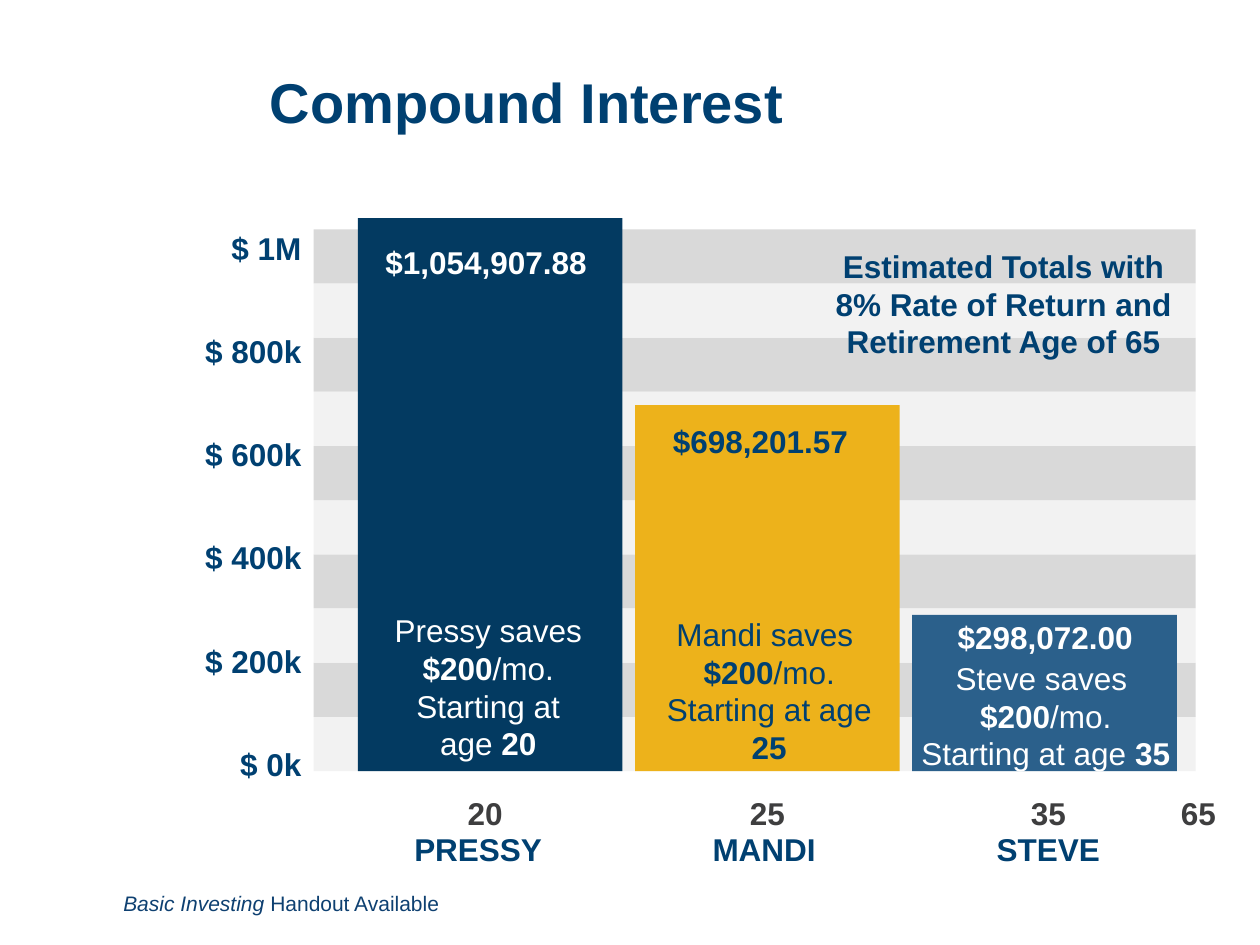
from dataclasses import dataclass

from pptx import Presentation, util as u
from pptx.dml.color import RGBColor
from pptx.enum import shapes, text

COLUMNS, ROWS = 100, 75
CELL = u.Inches(10) // COLUMNS

# Chart geometry in grid cells
PLOT_LEFT, PLOT_WIDTH = 24.9, 70
BASELINE, BAND_HEIGHT, BAND_COUNT = 61.2, 4.3, 10
BAR_LEFT, BAR_PITCH, BAR_WIDTH = 28.4, 22, 21
ROWS_PER_MILLION = 41.6


@dataclass(frozen=True)
class Theme:
    font: str = "Arial"
    title_size: int = 32
    body_size: int = 18
    note_size: int = 12
    navy: str = "004071"
    note: str = "0E4071"
    white: str = "FFFFFF"
    age: str = "3E3E3F"
    bands: tuple = ("F2F2F2", "D9D9D9")
    bars: tuple = ("033A61", "EDB21B", "2B608B")


THEME = Theme()
BOLD, ITALIC = {"bold": True}, {"italic": True}
LEFT, CENTER, RIGHT = (text.PP_ALIGN.LEFT, text.PP_ALIGN.CENTER,
                       text.PP_ALIGN.RIGHT)

# Boxes are (left, top, width, height) in cells; age and name are centres
SAVERS = [
    {"value": 1054907.88, "total": "$1,054,907.88", "ink": THEME.white,
     "total_box": (29.6, 18.8, 18.4, 4), "total_align": LEFT,
     "story_box": (29.7, 48, 18.1, 13.1),
     "story": [[("Pressy saves ", {}), ("$200", BOLD), ("/mo.", {})],
               [("Starting at age ", {}), ("20", BOLD)]],
     "age": ("20", 38.5), "name": ("PRESSY", 37.95)},
    {"value": 698201.57, "total": "$698,201.57", "ink": THEME.navy,
     "total_box": (51.1, 33, 18.5, 4), "total_align": CENTER,
     "story_box": (51.8, 48.3, 18.5, 13.1),
     "story": [[("Mandi saves ", {})],
               [("$200", BOLD), ("/mo.", {})],
               [("Starting at age ", {}), ("25", BOLD)]],
     "age": ("25", 60.9), "name": ("MANDI", 60.65)},
    {"value": 298072.00, "total": "$298,072.00", "ink": THEME.white,
     "total_box": (73.8, 48.6, 18.3, 4), "total_align": CENTER,
     "story_box": (71.8, 51.8, 22.4, 10.1),
     "story": [[("Steve saves \v", {}), ("$200", BOLD), ("/mo.", {})],
               [("Starting at age ", {}), ("35", BOLD)]],
     "age": ("35", 83.2), "name": ("STEVE", 83.2)},
]


def cells(*counts):
    return [round(count * CELL) for count in counts]


def style_font(font, color, **format_values):
    values = {"name": THEME.font, "size": u.Pt(THEME.body_size),
              **format_values}
    for attribute, value in values.items():
        setattr(font, attribute, value)
    font.color.rgb = RGBColor.from_string(color)


def add_block(slide, box, color):
    block = slide.shapes.add_shape(shapes.MSO_SHAPE.RECTANGLE, *cells(*box))
    block.shadow.inherit = False
    block.fill.solid()
    block.fill.fore_color.rgb = RGBColor.from_string(color)
    block.line.fill.background()


def add_text(slide, box, paragraphs, color, align=CENTER, wrap=True,
             size=THEME.body_size, gap=0):
    """Each paragraph is a list of (wording, format values) runs."""
    frame = slide.shapes.add_textbox(*cells(*box)).text_frame
    frame.word_wrap = wrap
    frame.auto_size = text.MSO_AUTO_SIZE.SHAPE_TO_FIT_TEXT
    for index, runs in enumerate(paragraphs):
        paragraph = frame.add_paragraph() if index else frame.paragraphs[0]
        paragraph.alignment = align
        if index and gap:
            paragraph.space_before = u.Pt(gap)
        for wording, formats in runs:
            before, line_break, after = wording.partition("\v")
            run = paragraph.add_run()
            run.text = before
            style_font(run.font, color, size=u.Pt(size), **formats)
            if line_break:
                paragraph.add_line_break()


def add_label(slide, box, wording, color=THEME.navy, **options):
    add_text(slide, box, [[(wording, BOLD)]], color, **options)


def set_title(slide, wording):
    title = slide.shapes.title
    title.left, title.top, title.width, title.height = cells(
        20.4, 1.1, 72.6, 14.5)
    title.text_frame.text = wording
    title.text_frame.vertical_anchor = text.MSO_ANCHOR.MIDDLE
    heading = title.text_frame.paragraphs[0]
    heading.alignment = LEFT
    heading.line_spacing = 0.9
    style_font(heading.runs[0].font, THEME.navy,
               size=u.Pt(THEME.title_size), bold=True)


def add_plot(slide):
    # Striped background, counted up from the baseline
    for band in range(BAND_COUNT):
        top = BASELINE - (band + 1) * BAND_HEIGHT
        add_block(slide, (PLOT_LEFT, top, PLOT_WIDTH, BAND_HEIGHT),
                  THEME.bands[band % 2])
    # Value axis
    ticks = ["$ 1M", "$ 800k", "$ 600k", "$ 400k", "$ 200k", "$ 0k"]
    add_text(slide, (15.2, 17.7, 9.7, 44.7), [[(tick, BOLD)] for tick in ticks],
             THEME.navy, align=RIGHT, gap=37.3)


def add_saver(slide, index, saver):
    height = saver["value"] / 1_000_000 * ROWS_PER_MILLION
    add_block(slide, (BAR_LEFT + index * BAR_PITCH, BASELINE - height,
                      BAR_WIDTH, height), THEME.bars[index])
    add_label(slide, saver["total_box"], saver["total"], saver["ink"],
              align=saver["total_align"])
    add_text(slide, saver["story_box"], saver["story"], saver["ink"])
    # Age and name below the bar
    for key, top, color in (("age", 62.5, THEME.age),
                            ("name", 65.4, THEME.navy)):
        wording, center = saver[key]
        add_label(slide, (center - 9.2, top, 18.4, 4), wording, color)


def main():
    deck = Presentation()
    deck.slide_width, deck.slide_height = COLUMNS * CELL, ROWS * CELL
    slide = deck.slides.add_slide(deck.slide_layouts.get_by_name("Title Only"))

    set_title(slide, "Compound Interest")
    add_plot(slide)
    for index, saver in enumerate(SAVERS):
        add_saver(slide, index, saver)

    # Retirement age, assumptions and footnote
    add_label(slide, (92.7, 62.5, 4.8, 4), "65", THEME.age, wrap=False)
    add_label(slide, (64.8, 19.1, 29.7, 10.1),
              "Estimated Totals with 8% Rate of Return and "
              "Retirement Age of 65")
    add_text(slide, (8.8, 70.2, 67.8, 3),
             [[("Basic Investing ", ITALIC), ("Handout Available", {})]],
             THEME.note, align=LEFT, size=THEME.note_size)
    deck.save("out.pptx")


if __name__ == "__main__":
    main()
